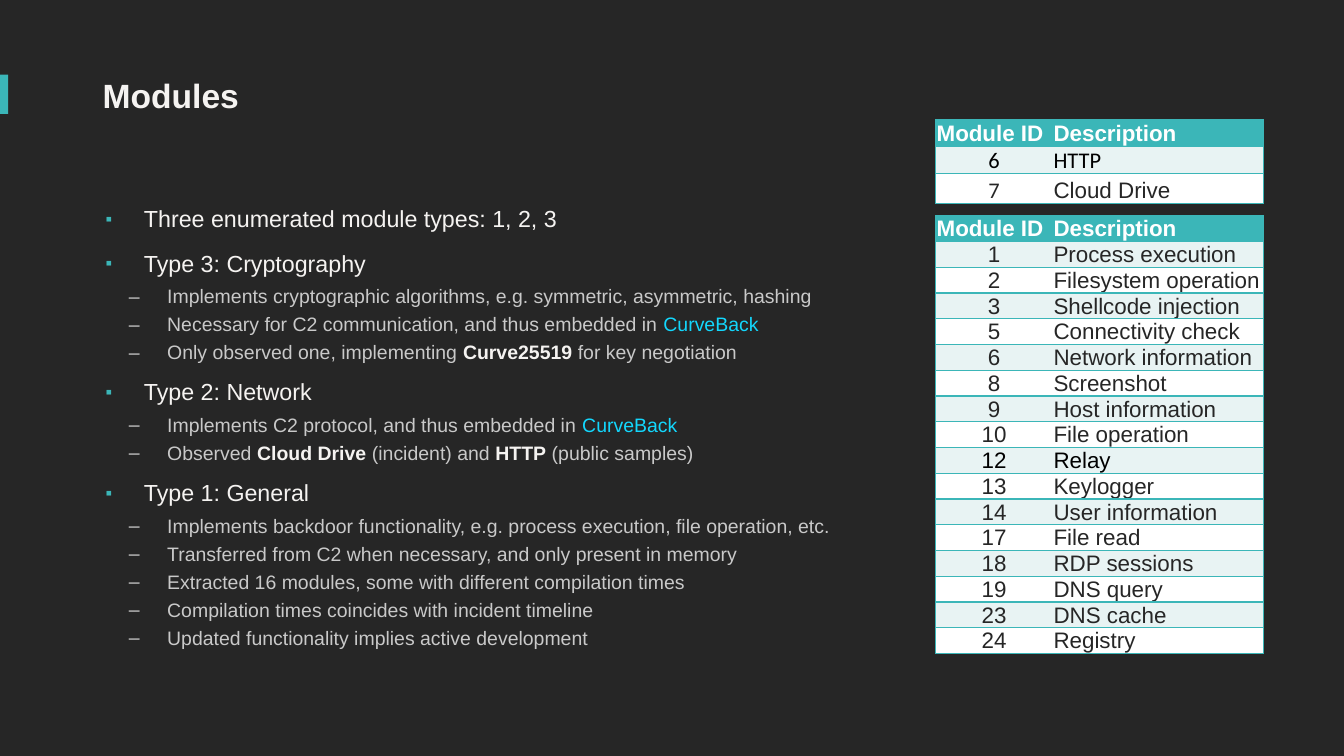
from dataclasses import dataclass

from lxml import etree
from pptx import Presentation, util as u
from pptx.dml.color import RGBColor
from pptx.enum import shapes, text
from pptx.oxml.ns import qn

TEAL, DARK, LIGHT, GREY, CYAN = "3BB6B8", "262626", "F5F3F1", "C9C9C9", "13D7FD"
WHITE, BLACK, PALE = "FFFFFF", "000000", "E8F3F3"


@dataclass(frozen=True)
class Run:
    words: str
    color: str = GREY
    bold: bool = False


@dataclass(frozen=True)
class Level:
    size: float
    color: str
    left: float
    before: float
    after: float
    bullet: str
    bullet_color: str
    bullet_percent: int


@dataclass(frozen=True)
class Entry:
    module_id: str
    description: str
    color: str = DARK
    id_font: str = "Arial"
    description_font: str = "Arial"


@dataclass(frozen=True)
class ModuleTable:
    top: float
    row_heights: list[float]
    entries: list[Entry]


TOPIC = Level(16.6, LIGHT, 0.41, 7, 7, "▪", TEAL, 80)
DETAIL = Level(13.9, GREY, 0.64, 0, 5, "–", GREY, 100)
HANGING = 0.38

CURVEBACK = Run("CurveBack", CYAN)
OUTLINE = [
    ("Three enumerated module types: 1, 2, 3", []),
    ("Type 3: Cryptography", [
        [Run("Implements cryptographic algorithms, e.g. symmetric, asymmetric, hashing")],
        [Run("Necessary for C2 communication, and thus embedded in "), CURVEBACK],
        [Run("Only observed one, implementing "), Run("Curve25519", LIGHT, True),
         Run(" for key negotiation")],
    ]),
    ("Type 2: Network", [
        [Run("Implements C2 protocol, and thus embedded in "), CURVEBACK],
        [Run("Observed "), Run("Cloud Drive", LIGHT, True), Run(" (incident) and "),
         Run("HTTP", LIGHT, True), Run(" (public samples)")],
    ]),
    ("Type 1: General", [
        [Run("Implements backdoor functionality, e.g. process execution, file operation, etc.")],
        [Run("Transferred from C2 when necessary, and only present in memory")],
        [Run("Extracted 16 modules, some with different compilation times")],
        [Run("Compilation times coincides with incident timeline")],
        [Run("Updated functionality implies active development")],
    ]),
]

GENERAL_MODULES = [
    Entry("1", "Process execution"), Entry("2", "Filesystem operation"),
    Entry("3", "Shellcode injection"), Entry("5", "Connectivity check"),
    Entry("6", "Network information"), Entry("8", "Screenshot"),
    Entry("9", "Host information"), Entry("10", "File operation"),
    Entry("12", "Relay", BLACK), Entry("13", "Keylogger"),
    Entry("14", "User information"), Entry("17", "File read"),
    Entry("18", "RDP sessions"), Entry("19", "DNS query"),
    Entry("23", "DNS cache"), Entry("24", "Registry"),
]
NETWORK_MODULES = [
    Entry("6", "HTTP", BLACK, "Calibri", "Calibri"),
    Entry("7", "Cloud Drive", id_font="Calibri"),
]
TABLES = [
    ModuleTable(2.14, [0.22] * (len(GENERAL_MODULES) + 1), GENERAL_MODULES),
    ModuleTable(1.19, [0.26, 0.27, 0.3], NETWORK_MODULES),
]
TABLE_LEFT, COLUMN_WIDTHS = 9.28, (1.16, 2.09)


def rgb(color: str) -> RGBColor:
    return RGBColor.from_string(color)


def apply(target, values: dict) -> None:
    for name, value in values.items():
        setattr(target, name, value)


def add_run(paragraph, run: Run, size: float, font_name: str = "Arial") -> None:
    part = paragraph.add_run()
    part.text = run.words
    apply(part.font, {"name": font_name, "size": u.Pt(size), "bold": run.bold})
    part.font.color.rgb = rgb(run.color)


def add_text_frame(slide, left: float, top: float, width: float, height: float, inset_top: float):
    frame = slide.shapes.add_textbox(*map(u.Inches, (left, top, width, height))).text_frame
    apply(frame, {"word_wrap": True, "margin_top": u.Inches(inset_top),
                  "vertical_anchor": text.MSO_ANCHOR.TOP})
    return frame


def add_bullet(paragraph, level: Level) -> None:
    props = paragraph._p.get_or_add_pPr()
    props.set("marL", str(u.Inches(level.left)))
    props.set("indent", str(-u.Inches(HANGING)))
    bullet_color = etree.SubElement(props, qn("a:buClr"))
    etree.SubElement(bullet_color, qn("a:srgbClr"), val=level.bullet_color)
    etree.SubElement(props, qn("a:buSzPct"), val=str(level.bullet_percent * 1000))
    etree.SubElement(props, qn("a:buFont"), typeface="Arial")
    etree.SubElement(props, qn("a:buChar"), char=level.bullet)


def add_outline(slide) -> None:
    frame = add_text_frame(slide, 0.92, 2.01, 8.2, 4.53, 0.05)
    lines = []
    for topic, details in OUTLINE:
        lines.append((TOPIC, [Run(topic, TOPIC.color)]))
        lines.extend((DETAIL, runs) for runs in details)
    for index, (level, runs) in enumerate(lines):
        paragraph = frame.add_paragraph() if index else frame.paragraphs[0]
        add_bullet(paragraph, level)
        apply(paragraph, {"level": 0 if level is TOPIC else 1, "line_spacing": 0.9,
                          "space_before": u.Pt(level.before if index else 0),
                          "space_after": u.Pt(level.after)})
        for run in runs:
            add_run(paragraph, run, level.size)


def add_borders(cell, open_side: str) -> None:
    """Rule every side of the cell except the one shared with its neighbour."""
    props = cell._tc.get_or_add_tcPr()
    for side in "LRTB":
        line = etree.SubElement(props, qn(f"a:ln{side}"), w=str(u.Pt(1)))
        if side == open_side:
            etree.SubElement(line, qn("a:noFill"))
        else:
            fill = etree.SubElement(line, qn("a:solidFill"))
            etree.SubElement(fill, qn("a:srgbClr"), val=TEAL)


def fill_cell(cell, run: Run, font_name: str, background: str, open_side: str,
              centred: bool) -> None:
    add_borders(cell, open_side)
    cell.fill.solid()
    cell.fill.fore_color.rgb = rgb(background)
    inset = u.Inches(0.01)
    apply(cell, {"margin_left": inset, "margin_top": inset, "margin_right": inset,
                 "margin_bottom": 0, "vertical_anchor": text.MSO_ANCHOR.BOTTOM})
    paragraph = cell.text_frame.paragraphs[0]
    apply(paragraph, {"line_spacing": 0.92, "alignment":
                      text.PP_ALIGN.CENTER if centred else text.PP_ALIGN.LEFT})
    add_run(paragraph, run, 16, font_name)


def add_module_table(slide, modules: ModuleTable) -> None:
    rows = [Entry("Module ID", "Description", WHITE), *modules.entries]
    table = slide.shapes.add_table(
        len(rows), 2, u.Inches(TABLE_LEFT), u.Inches(modules.top),
        u.Inches(sum(COLUMN_WIDTHS)), u.Inches(sum(modules.row_heights))).table
    for column, width in zip(table.columns, COLUMN_WIDTHS):
        column.width = u.Inches(width)
    for index, (entry, height) in enumerate(zip(rows, modules.row_heights)):
        table.rows[index].height = u.Inches(height)
        header = index == 0
        background = TEAL if header else PALE if index % 2 else WHITE
        fill_cell(table.cell(index, 0), Run(entry.module_id, entry.color, header),
                  entry.id_font, background, "R", not header)
        fill_cell(table.cell(index, 1), Run(entry.description, entry.color, header),
                  entry.description_font, background, "L", False)


def main() -> None:
    deck = Presentation()
    apply(deck, {"slide_width": u.Inches(13.33), "slide_height": u.Inches(7.5)})
    slide = deck.slides.add_slide(deck.slide_layouts[6])
    slide.background.fill.solid()
    slide.background.fill.fore_color.rgb = rgb(DARK)

    accent = slide.shapes.add_shape(
        shapes.MSO_SHAPE.RECTANGLE, *map(u.Inches, (0, 0.74, 0.08, 0.39)))
    accent.shadow.inherit = False
    accent.fill.solid()
    accent.fill.fore_color.rgb = rgb(TEAL)
    accent.line.fill.background()

    add_outline(slide)
    title = add_text_frame(slide, 0.92, 0.74, 8.2, 1.17, 0)
    add_run(title.paragraphs[0], Run("Modules", LIGHT, True), 24)
    for modules in TABLES:
        add_module_table(slide, modules)
    deck.save("out.pptx")


if __name__ == "__main__":
    main()
